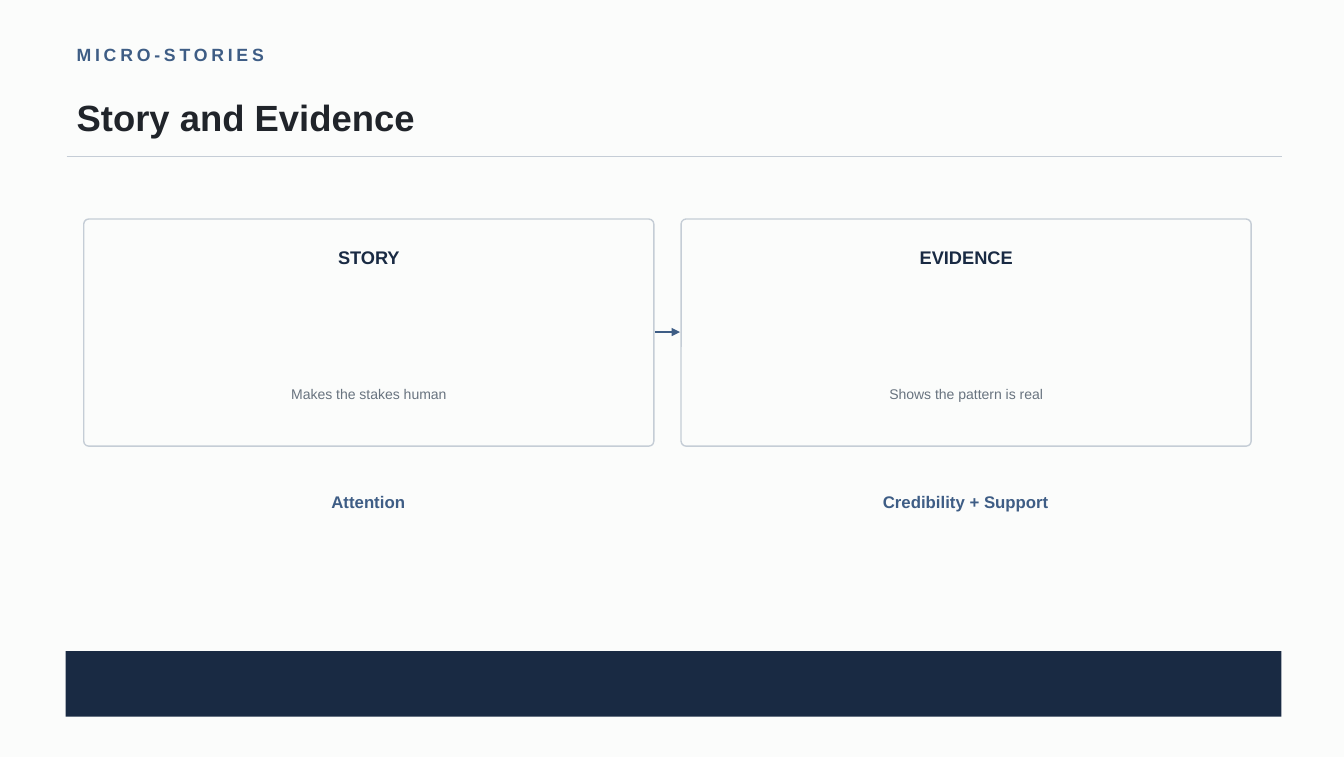
"""Build the Story and Evidence slide."""
from dataclasses import dataclass

from pptx import Presentation
from pptx.dml.color import RGBColor as Rgb
from pptx.enum.shapes import MSO_CONNECTOR as Connector, MSO_SHAPE as Shape
from pptx.enum.text import MSO_ANCHOR as Anchor, MSO_AUTO_SIZE as AutoSize, PP_ALIGN as Align
from pptx.oxml.ns import qn
from pptx.util import Pt
from lxml.etree import SubElement


@dataclass(frozen=True)
class Theme:
    """Font, colours and type sizes of the slide."""
    font: str = "Arial"
    paper: str = "FBFCFB"
    ink: str = "20242A"
    navy: str = "192A43"
    accent: str = "3E5D85"
    muted: str = "68737F"
    rule: str = "C5CDD6"
    title_size: float = 26
    heading_size: float = 13
    eyebrow_size: float = 12.6
    outcome_size: float = 12
    note_size: float = 10


def write(frame, text, *, font, size, color, bold=False, align=Align.LEFT,
          anchor=Anchor.TOP, leading=None, tracking=None):
    """Put one formatted paragraph into a text frame without margins."""
    frame.word_wrap = True
    frame.auto_size = AutoSize.NONE
    frame.vertical_anchor = anchor
    frame.margin_left = frame.margin_right = frame.margin_top = frame.margin_bottom = 0
    paragraph = frame.paragraphs[0]
    paragraph.alignment = align
    if leading:
        paragraph.line_spacing = leading
    run = paragraph.add_run()
    run.text = text
    run.font.name = font
    run.font.size = Pt(size)
    run.font.bold = bold
    run.font.color.rgb = Rgb.from_string(color)
    if tracking:
        run._r.get_or_add_rPr().set("spc", str(round(tracking * 100)))


class SlideBuilder:
    """Draw themed elements on one slide, measured in points."""

    def __init__(self, slide, theme):
        """Keep the slide and theme and paint the background."""
        self.slide, self.theme = slide, theme
        background = slide.background.fill
        background.solid()
        background.fore_color.rgb = Rgb.from_string(theme.paper)

    def title(self, text, left, top, width, height, **style):
        """Move and fill the title placeholder."""
        heading = self.slide.shapes.title
        heading.left, heading.top = Pt(left), Pt(top)
        heading.width, heading.height = Pt(width), Pt(height)
        write(heading.text_frame, text, font=self.theme.font, **style)

    def label(self, text, left, top, width, height, **style):
        """Add a text box."""
        box = self.slide.shapes.add_textbox(Pt(left), Pt(top), Pt(width), Pt(height))
        write(box.text_frame, text, font=self.theme.font, **style)

    def panel(self, kind, left, top, width, height, fill, outline=None, corner=None):
        """Add a filled shape with an optional outline."""
        panel = self.slide.shapes.add_shape(kind, Pt(left), Pt(top), Pt(width), Pt(height))
        panel.shadow.inherit = False
        panel.fill.solid()
        panel.fill.fore_color.rgb = Rgb.from_string(fill)
        if corner is not None:
            panel.adjustments[0] = corner
        if outline:
            panel.line.color.rgb = Rgb.from_string(outline)
            panel.line.width = Pt(1)
        else:
            panel.line.fill.background()

    def line(self, start, end, y, color, arrow=False):
        """Add a horizontal line, with an arrowhead if asked."""
        line = self.slide.shapes.add_connector(
            Connector.STRAIGHT, Pt(start), Pt(y), Pt(end), Pt(y))
        line.line.color.rgb = Rgb.from_string(color)
        line.line.width = Pt(1.2)
        if arrow:
            SubElement(line.line._get_or_add_ln(), qn("a:tailEnd"), type="triangle")
        SubElement(line._element.spPr, qn("a:effectLst"))

    def card(self, heading, note, left, top, width, height):
        """Add an outlined card with a heading and a note."""
        theme = self.theme
        centred = {"align": Align.CENTER, "anchor": Anchor.MIDDLE}
        self.panel(Shape.ROUNDED_RECTANGLE, left, top, width, height,
                   theme.paper, theme.rule, corner=0.022)
        self.label(heading, left + 10.8, top + 18, width - 21.6, 18,
                   size=theme.heading_size, color=theme.navy, bold=True, **centred)
        self.label(note, left + 12.96, top + 97.92, width - 25.92, 53.28,
                   size=theme.note_size, color=theme.muted, **centred)


def main():
    """Compose and save the slide."""
    deck = Presentation()
    deck.slide_width, deck.slide_height = Pt(959.04), Pt(540)
    theme = Theme()
    page = SlideBuilder(deck.slides.add_slide(deck.slide_layouts[5]), theme)

    page.label("MICRO-STORIES", 54.72, 33.12, 590.4, 14.4, size=theme.eyebrow_size,
               color=theme.accent, bold=True, leading=0.9, tracking=2.7)
    page.title("Story and Evidence", 54.72, 67.68, 864, 39.6,
               size=theme.title_size, color=theme.ink, bold=True)
    page.line(47.52, 915.12, 111.6, theme.rule)

    card_left, card_top, card_width, card_height, card_step = 59.76, 156.24, 406.8, 162, 426.24
    cards = [("STORY", "Makes the stakes human"),
             ("EVIDENCE", "Shows the pattern is real")]
    for column, (heading, note) in enumerate(cards):
        page.card(heading, note, card_left + column * card_step, card_top,
                  card_width, card_height)
    page.line(467.28, 485.28, 236.88, theme.accent, arrow=True)

    outcomes = [("Attention", 223.2, 79.2, Align.CENTER),
                ("Credibility + Support", 630, 216, Align.LEFT)]
    for outcome, left, width, align in outcomes:
        page.label(outcome, left, 350.64, width, 15.84, size=theme.outcome_size,
                   color=theme.accent, bold=True, align=align)

    page.panel(Shape.RECTANGLE, 46.8, 464.4, 867.6, 46.8, theme.navy)
    deck.save("out.pptx")


if __name__ == "__main__":
    main()
